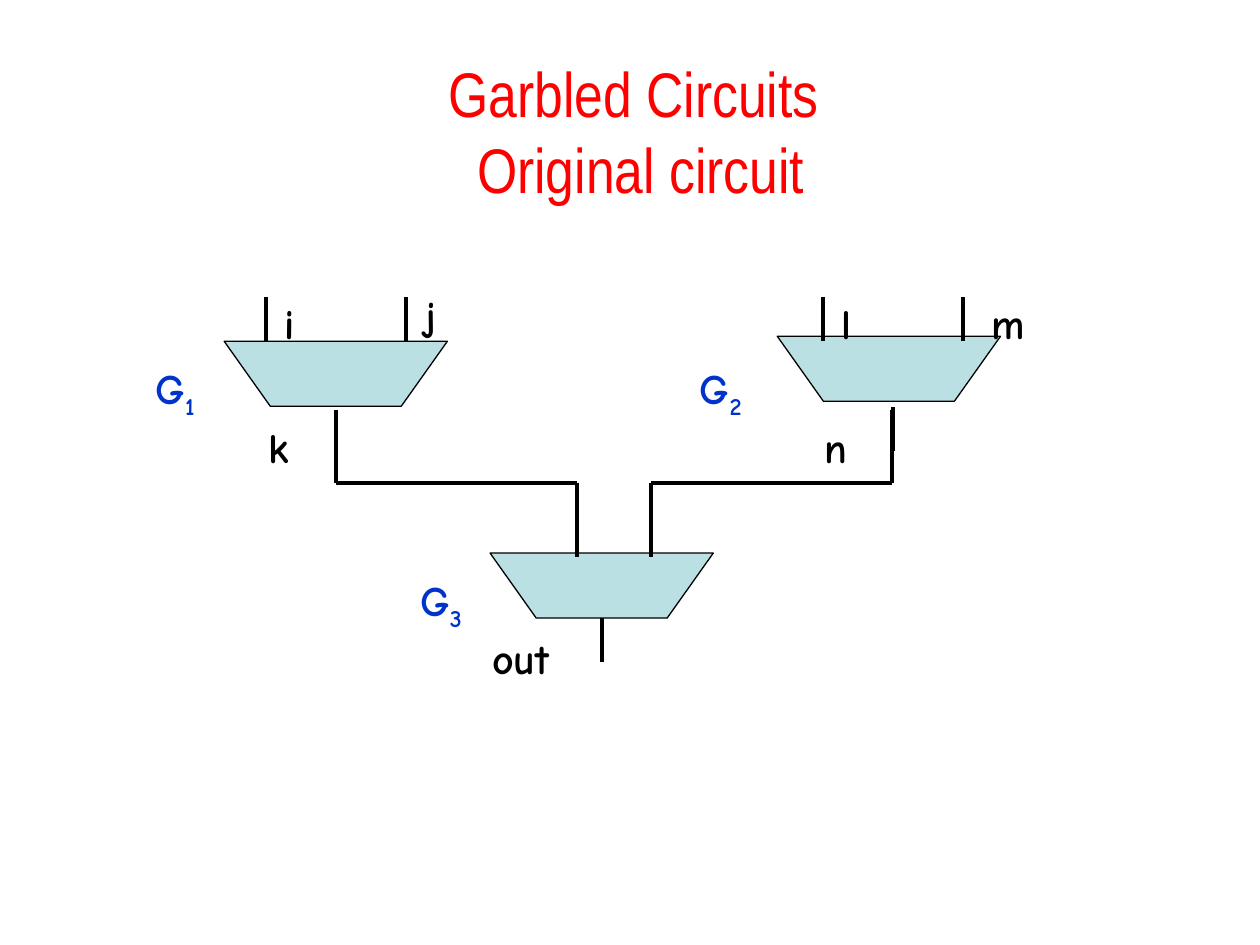
import pptx
import pptx.dml.color
import pptx.enum.shapes
import pptx.enum.text
import pptx.util
from pptx.util import Cm

RGB = pptx.dml.color.RGBColor.from_string
THEME = {
    "title": {"font": "Arial Narrow", "size": 36, "bold": False, "color": "FF0000"},
    "wire": {"font": "Comic Neue", "size": 24, "bold": True, "color": "000000"},
    "gate": {"font": "Comic Neue", "size": 24, "bold": True, "color": "0033CC"},
    "gate_fill": "BBE0E3",
    "line": "000000",
    "outline_width": 0.75,
    "wire_width": 2.25,
}

# All lengths are in centimetres.
TITLE = ("Garbled Circuits\v Original circuit", (1.98, 1.17, 21.59, 2.92))
GATE_W, GATE_H, GATE_INSET = 4.5, 1.31, 0.93
LABEL_H, GATE_LABEL_W = 1.27, 1.42

# number, gate left and top, label left and top
GATES = [
    ("1", (4.52, 6.88), (2.82, 7.19)),
    ("2", (15.67, 6.78), (13.82, 7.19)),
    ("3", (9.88, 11.15), (8.18, 11.46)),
]
# name, left, top, width
WIRE_LABELS = [
    ("i", 5.46, 5.87, 0.76),
    ("j", 8.26, 5.72, 0.86),
    ("k", 5.13, 8.38, 0.97),
    ("l", 16.69, 5.87, 0.74),
    ("m", 19.74, 5.87, 1.17),
    ("n", 16.36, 8.38, 0.97),
    ("out", 9.6, 12.62, 1.8),
]
INPUT_XS = [5.36, 8.18, 16.59, 19.41]
INPUT_TOP, INPUT_BOTTOM = 5.99, 6.88
OUTPUT_TOP, BEND_Y, JOIN_Y = 8.26, 9.73, 11.23
# x at the upper gate, x at the lower gate
LINKS = [(6.78, 11.63), (17.98, 13.13)]
STUBS = [
    (6.78, 8.41, 9.3),
    (18.01, 8.2, 9.09),
    (12.14, 12.45, 13.34),
]


def add_text(slide, text, box, style, subscript="", wrap=False):
    sp = slide.shapes.add_textbox(*map(Cm, box))
    tf = sp.text_frame
    tf.word_wrap = wrap
    p = tf.paragraphs[0]
    p.text = text
    p.alignment = pptx.enum.text.PP_ALIGN.CENTER
    p.font.name = style["font"]
    p.font.size = pptx.util.Pt(style["size"])
    p.font.bold = style["bold"]
    p.font.color.rgb = RGB(style["color"])
    if subscript:
        r = p.add_run()
        r.text = subscript
        r.font._element.set("baseline", "-25000")
    for r in p.runs:
        r.font.name = style["font"]
    return tf


def add_gate(slide, left, top):
    right, bottom = left + GATE_W, top + GATE_H
    outline = slide.shapes.build_freeform(Cm(left), Cm(top))
    outline.add_line_segments([
        (Cm(left + GATE_INSET), Cm(bottom)),
        (Cm(right - GATE_INSET), Cm(bottom)),
        (Cm(right), Cm(top)),
    ])
    sp = outline.convert_to_shape()
    sp.shadow.inherit = False
    sp.fill.solid()
    sp.fill.fore_color.rgb = RGB(THEME["gate_fill"])
    sp.line.color.rgb = RGB(THEME["line"])
    sp.line.width = pptx.util.Pt(THEME["outline_width"])


def add_wire(slide, x1, y1, x2, y2):
    wire = slide.shapes.add_connector(
        pptx.enum.shapes.MSO_CONNECTOR.STRAIGHT, Cm(x1), Cm(y1), Cm(x2), Cm(y2))
    wire.line.color.rgb = RGB(THEME["line"])
    wire.line.width = pptx.util.Pt(THEME["wire_width"])
    wire._element.spPr.append(pptx.oxml.parse_xml(
        '<a:effectLst xmlns:a="http://schemas.openxmlformats.org/drawingml/2006/main"/>'))


def main():
    prs = pptx.Presentation()
    prs.slide_width, prs.slide_height = Cm(25.4), Cm(19.05)
    slide = prs.slides.add_slide(prs.slide_layouts[6])

    title = add_text(slide, *TITLE, THEME["title"], wrap=True)
    title.vertical_anchor = pptx.enum.text.MSO_ANCHOR.MIDDLE

    for number, corner, label in GATES:
        add_gate(slide, *corner)
        add_text(slide, "G", (*label, GATE_LABEL_W, LABEL_H), THEME["gate"], number)
    for name, left, top, width in WIRE_LABELS:
        add_text(slide, name, (left, top, width, LABEL_H), THEME["wire"])

    for x in INPUT_XS:
        add_wire(slide, x, INPUT_BOTTOM, x, INPUT_TOP)
    for x, top, bottom in STUBS:
        add_wire(slide, x, bottom, x, top)
    for start, end in LINKS:
        add_wire(slide, start, OUTPUT_TOP, start, BEND_Y)
        add_wire(slide, start, BEND_Y, end, BEND_Y)
        add_wire(slide, end, BEND_Y, end, JOIN_Y)

    prs.save("out.pptx")


if __name__ == "__main__":
    main()
